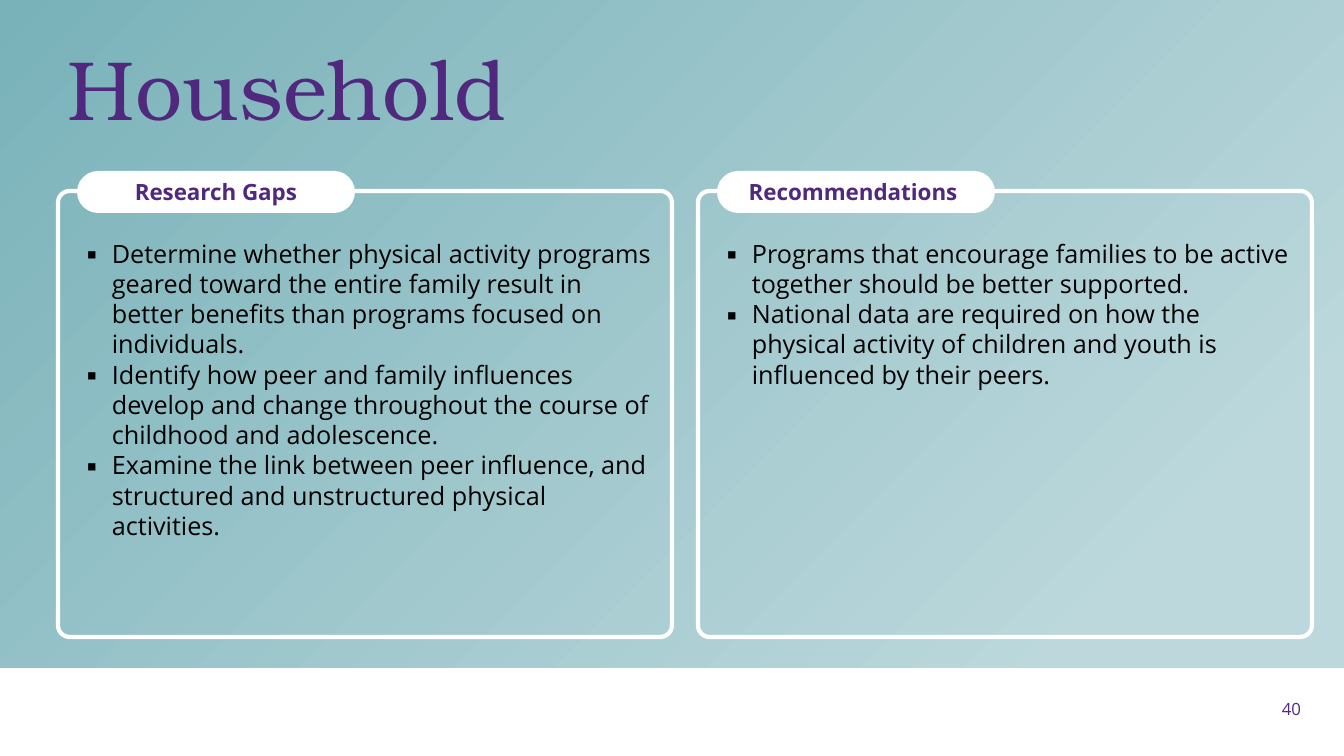
from dataclasses import dataclass

from lxml.etree import SubElement
from pptx import Presentation
from pptx.dml.color import RGBColor
from pptx.enum.shapes import MSO_SHAPE
from pptx.enum.text import MSO_ANCHOR, PP_ALIGN
from pptx.oxml import parse_xml
from pptx.oxml.ns import nsdecls, qn
from pptx.util import Pt

TITLE = "Household"
PAGE_NUMBER = "40"
CARDS = [
    ("Research Gaps", [
        "Determine whether physical activity programs geared toward the entire family "
        "result in better benefits than programs focused on individuals.",
        "Identify how peer and family influences develop and change throughout the "
        "course of childhood and adolescence.",
        "Examine the link between peer influence, and structured and unstructured "
        "physical activities.",
    ]),
    ("Recommendations ", [
        "Programs that encourage families to be active together should be better supported.",
        "National data are required on how the physical activity of children and youth "
        "is influenced by their peers.",
    ]),
]


@dataclass(frozen=True)
class Theme:
    purple: str = "50287D"
    black: str = "000000"
    white: str = "FFFFFF"
    light_teal: str = "BCD8DC"
    teal: str = "79B2B9"
    title_font: str = "TeX Gyre Bonum"
    body_font: str = "Open Sans"
    title_size: int = 60
    title_leading: int = 55
    body_size: int = 18
    label_size: int = 16
    number_size: int = 12
    border: int = 3


THEME = Theme()
EMU_PER_PX = 914400 / 100.8
SLIDE_WIDTH, SLIDE_HEIGHT, FOOTER_TOP = 1344, 756, 668
CARD_LEFT, CARD_TOP, CARD_WIDTH, CARD_HEIGHT = 58, 191, 614, 446
CARD_PITCH, CONTENT_INDENT, BULLET_INDENT = 640, 19, 25


def px(length):
    return round(length * EMU_PER_PX)


def add_panel(slide, kind, box, fill=None, line=None, rounding=None):
    shape = slide.shapes.add_shape(kind, *map(px, box))
    shape.shadow.inherit = False
    if rounding is not None:
        shape.adjustments[0] = rounding
    if fill:
        shape.fill.solid()
        shape.fill.fore_color.rgb = RGBColor.from_string(fill)
    else:
        shape.fill.background()
    if line:
        shape.line.color.rgb = RGBColor.from_string(line)
        shape.line.width = Pt(THEME.border)
    else:
        shape.line.fill.background()
    return shape


def add_backdrop(slide):
    """Radial gradient spreading from the bottom right corner."""
    backdrop = add_panel(slide, MSO_SHAPE.RECTANGLE, (0, 0, SLIDE_WIDTH, FOOTER_TOP))
    properties = backdrop.fill._xPr
    gradient = parse_xml(
        f'<a:gradFill {nsdecls("a")} rotWithShape="1"><a:gsLst>'
        f'<a:gs pos="14000"><a:srgbClr val="{THEME.light_teal}"/></a:gs>'
        f'<a:gs pos="100000"><a:srgbClr val="{THEME.teal}"/></a:gs></a:gsLst>'
        '<a:path path="circle"><a:fillToRect l="100000" t="100000"/></a:path></a:gradFill>'
    )
    properties.replace(properties.find(qn("a:noFill")), gradient)


def write_text(shape, paragraphs, size, color, font=THEME.body_font, bold=False,
               align=PP_ALIGN.LEFT, anchor=MSO_ANCHOR.TOP, leading=None, bullet=None):
    frame = shape.text_frame
    frame.word_wrap = True
    frame.vertical_anchor = anchor
    for index, text in enumerate(paragraphs):
        paragraph = frame.add_paragraph() if index else frame.paragraphs[0]
        paragraph.alignment = align
        if leading:
            paragraph.line_spacing = Pt(leading)
        if bullet:
            properties = paragraph._p.get_or_add_pPr()
            properties.set("marL", str(px(BULLET_INDENT)))
            properties.set("indent", str(-px(BULLET_INDENT)))
            SubElement(properties, qn("a:buFont"), typeface=font)
            SubElement(properties, qn("a:buChar"), char=bullet)
        run = paragraph.add_run()
        run.text = text
        run.font.name = font
        run.font.size = Pt(size)
        run.font.bold = bold
        run.font.color.rgb = RGBColor.from_string(color)


def add_text(slide, box, paragraphs, **style):
    write_text(slide.shapes.add_textbox(*map(px, box)), paragraphs, **style)


def add_card(slide, left, label, points):
    content_left = left + CONTENT_INDENT
    add_panel(slide, MSO_SHAPE.ROUNDED_RECTANGLE,
              (left, CARD_TOP, CARD_WIDTH, CARD_HEIGHT), line=THEME.white, rounding=0.026)
    add_text(slide, (content_left, CARD_TOP + 42, 591, 298), points,
             size=THEME.body_size, color=THEME.black, bullet="▪")
    pill = add_panel(slide, MSO_SHAPE.ROUNDED_RECTANGLE,
                     (content_left, CARD_TOP - 20, 278, 42), fill=THEME.white, rounding=0.5)
    write_text(pill, [label], size=THEME.label_size, color=THEME.purple, bold=True,
               align=PP_ALIGN.CENTER, anchor=MSO_ANCHOR.MIDDLE)


def main():
    presentation = Presentation()
    presentation.slide_width = px(SLIDE_WIDTH)
    presentation.slide_height = px(SLIDE_HEIGHT)
    slide = presentation.slides.add_slide(presentation.slide_layouts[6])

    add_backdrop(slide)
    add_panel(slide, MSO_SHAPE.RECTANGLE,
              (0, FOOTER_TOP, SLIDE_WIDTH, SLIDE_HEIGHT - FOOTER_TOP), fill=THEME.white)
    add_text(slide, (1264, 689, 47, 40), [PAGE_NUMBER], size=THEME.number_size,
             color=THEME.purple, align=PP_ALIGN.RIGHT, anchor=MSO_ANCHOR.MIDDLE)
    add_text(slide, (58, 26, 1159, 146), [TITLE], size=THEME.title_size,
             color=THEME.purple, font=THEME.title_font, anchor=MSO_ANCHOR.MIDDLE,
             leading=THEME.title_leading)
    for index, (label, points) in enumerate(CARDS):
        add_card(slide, CARD_LEFT + index * CARD_PITCH, label, points)

    presentation.save("out.pptx")


if __name__ == "__main__":
    main()
